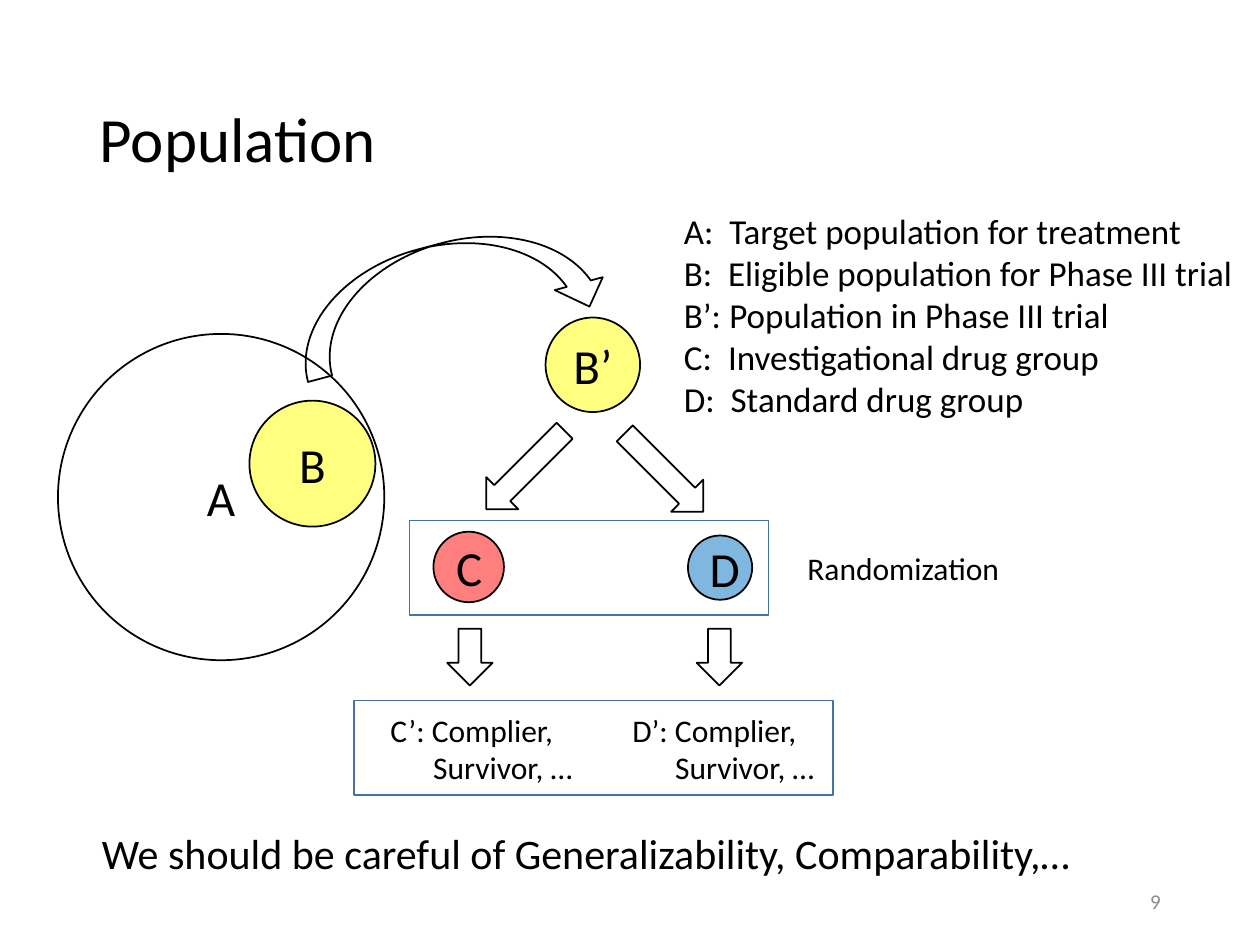
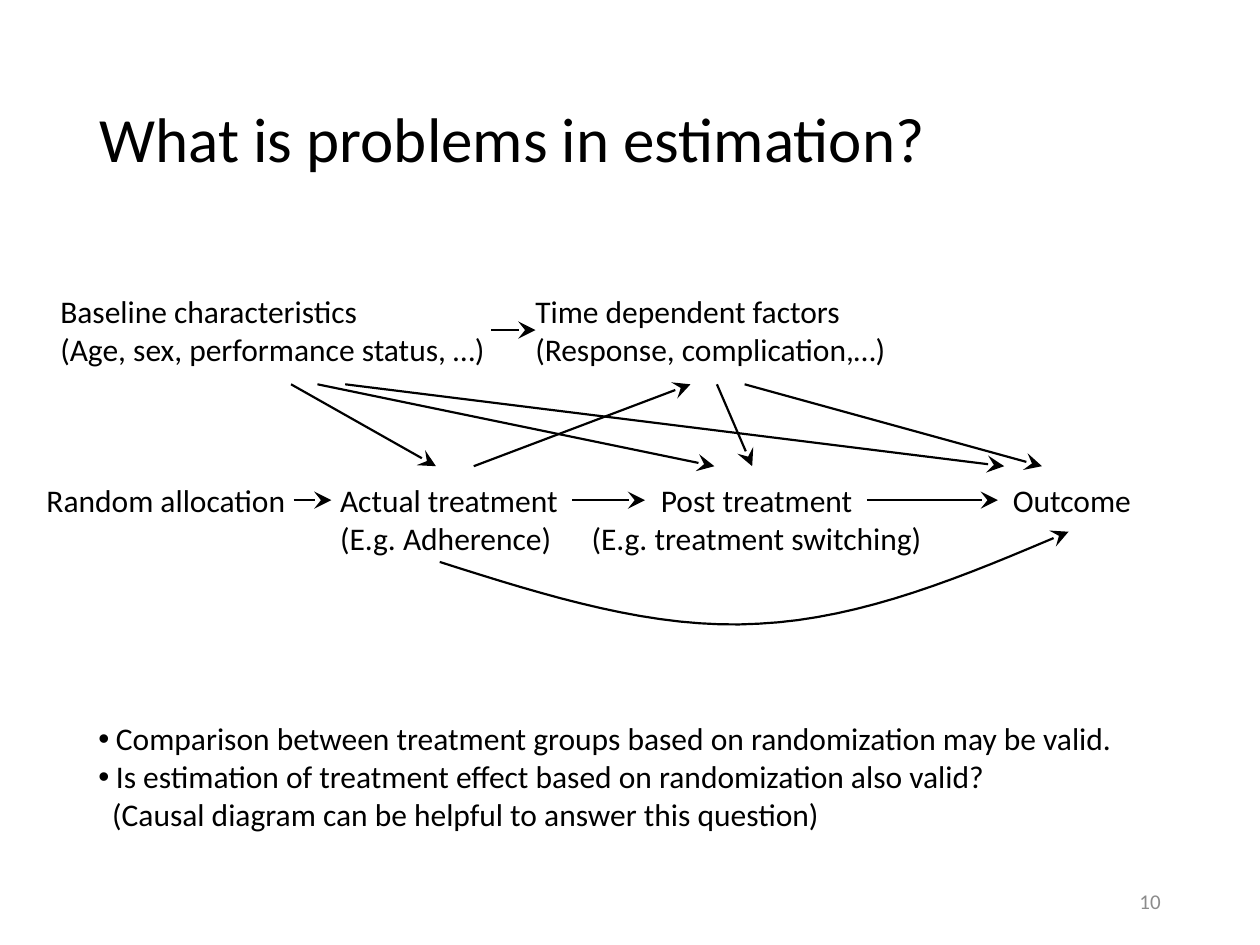
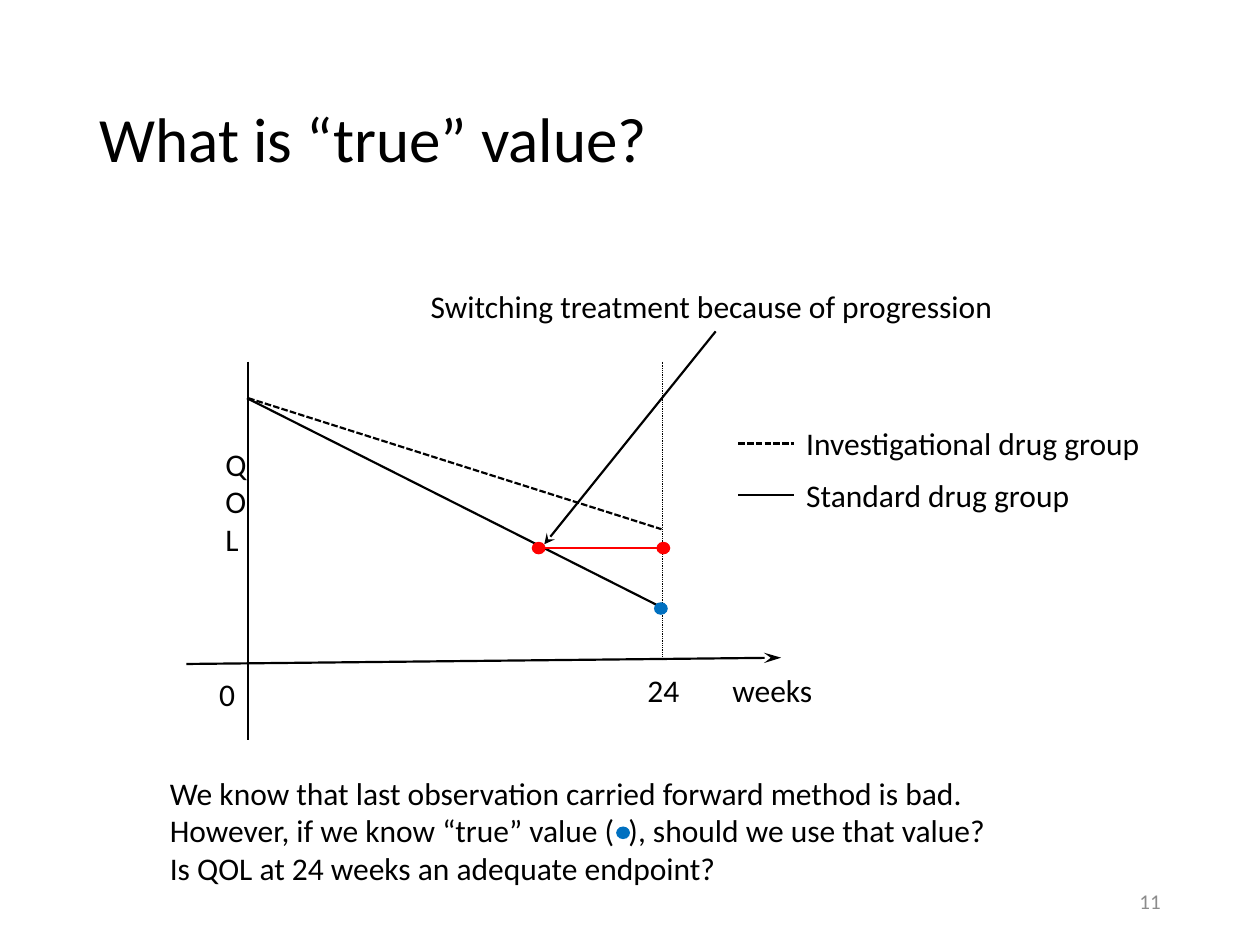
import pptx
import pptx.util
import pptx.dml.color
import pptx.enum.dml
import pptx.enum.shapes
import pptx.enum.text
import pptx.oxml.ns
from lxml import etree

Inches = pptx.util.Inches
Pt = pptx.util.Pt
Shape = pptx.enum.shapes.MSO_SHAPE
Align = pptx.enum.text.PP_ALIGN
Anchor = pptx.enum.text.MSO_ANCHOR
Fit = pptx.enum.text.MSO_AUTO_SIZE
Dash = pptx.enum.dml.MSO_LINE
qn = pptx.oxml.ns.qn

COLORS = {"ink": "000000", "gray": "8C8C8C", "frame": "43739E",
          "yellow": "FFFF00", "red": "FF0000", "blue": "0070C0"}
FONT = "Calibri"
SMALL, LONG, LARGE = ("med", "med"), ("med", "lg"), ("lg", "lg")


def tint(name):
    return pptx.dml.color.RGBColor.from_string(COLORS[name])


def put(frame, text, size=18, color="ink", align=None, space=None,
        anchor=Anchor.TOP, wrap=True, indents=(), bullets=()):
    frame.word_wrap = wrap
    frame.vertical_anchor = anchor
    for i, words in enumerate(text.split("\n")):
        para = frame.paragraphs[0] if i == 0 else frame.add_paragraph()
        para.alignment = align
        para.line_spacing = space
        para.space_before = Pt(0)
        props = para._p.get_or_add_pPr()
        if indents:
            left, first = indents[i]
            props.set("marL", str(Inches(left)))
            props.set("indent", str(Inches(first)))
        if bullets:
            if bullets[i]:
                etree.SubElement(props, qn("a:buChar"), char=bullets[i])
            else:
                etree.SubElement(props, qn("a:buNone"))
        run = para.add_run()
        run.text = words
        run.font.name = FONT
        run.font.size = Pt(size)
        run.font.color.rgb = tint(color)


class Deck:
    def __init__(self, first):
        self.show = pptx.Presentation()
        self.show.slide_width = Inches(10)
        self.show.slide_height = Inches(7.5)
        self.number = first
        self.slide = None

    def place(self, item, left, top, width, height):
        item.left, item.top = Inches(left), Inches(top)
        item.width, item.height = Inches(width), Inches(height)

    def page(self, title, layout=5):
        self.slide = self.show.slides.add_slide(self.show.slide_layouts[layout])
        head = self.slide.shapes.title
        self.place(head, 0.69, 0.4, 8.62, 1.45)
        put(head.text_frame, title, size=36, align=Align.LEFT, space=0.9,
            anchor=Anchor.MIDDLE)
        self.note(str(self.number), 7.06, 6.95, 2.25, 0.4, size=12, color="gray",
                  align=Align.RIGHT, anchor=Anchor.MIDDLE, wrap=True)
        self.number += 1

    def note(self, text, left, top, width, height=0.4, wrap=False, **style):
        box = self.slide.shapes.add_textbox(
            Inches(left), Inches(top), Inches(width), Inches(height))
        put(box.text_frame, text, wrap=wrap, **style)
        if not wrap:
            box.text_frame.auto_size = Fit.SHAPE_TO_FIT_TEXT

    def list(self, text, left, top, width, height, **style):
        body = self.slide.placeholders[1]
        self.place(body, left, top, width, height)
        body.text_frame.auto_size = Fit.NONE
        put(body.text_frame, text, **style)

    def shape(self, kind, left, top, width, height, fill=None, alpha=None,
              edge="ink", turn=0, text=None):
        item = self.slide.shapes.add_shape(
            kind, Inches(left), Inches(top), Inches(width), Inches(height))
        item.shadow.inherit = False
        item.rotation = turn
        if fill:
            item.fill.solid()
            item.fill.fore_color.rgb = tint(fill)
            if alpha:
                color = item._element.spPr.find(".//" + qn("a:srgbClr"))
                etree.SubElement(color, qn("a:alpha"), val=str(alpha * 1000))
        else:
            item.fill.background()
        if edge:
            item.line.color.rgb = tint(edge)
            item.line.width = Pt(1)
        else:
            item.line.fill.background()
        if text:
            put(item.text_frame, text, size=28, align=Align.CENTER,
                anchor=Anchor.MIDDLE)

    def disc(self, text, left, top, size, fill=None):
        self.shape(Shape.OVAL, left, top, size, size, fill, 50, text=text)

    def dot(self, left, top, fill):
        self.shape(Shape.OVAL, left, top, 0.11, 0.1, fill, edge=None)

    def stroke(self, item, color="ink", width=1.25, dash=None, arrow=None):
        item.line.color.rgb = tint(color)
        item.line.width = Pt(width)
        if dash:
            item.line.dash_style = dash
        if arrow:
            wide, long = arrow
            edge = item._element.spPr.find(qn("a:ln"))
            etree.SubElement(edge, qn("a:tailEnd"), type="stealth", w=wide, len=long)

    def line(self, x1, y1, x2, y2, **style):
        item = self.slide.shapes.add_connector(
            pptx.enum.shapes.MSO_CONNECTOR.STRAIGHT,
            Inches(x1), Inches(y1), Inches(x2), Inches(y2))
        self.stroke(item, **style)
        etree.SubElement(item._element.spPr, qn("a:effectLst"))

    def curve(self, start, parts, steps=16, **style):
        points = []
        last = start
        for a, b, end in parts:
            for i in range(1, steps + 1):
                t = i / steps
                u = 1 - t
                points.append(tuple(
                    Inches(u**3 * p + 3 * u * u * t * q + 3 * u * t * t * r + t**3 * s)
                    for p, q, r, s in zip(last, a, b, end)))
            last = end
        path = self.slide.shapes.build_freeform(Inches(start[0]), Inches(start[1]))
        path.add_line_segments(points, close=False)
        item = path.convert_to_shape()
        item.shadow.inherit = False
        item.fill.background()
        self.stroke(item, **style)


def groups(deck):
    deck.page("Population")
    deck.disc("B’", 4.33, 2.52, 0.75, "yellow")
    deck.disc("A", 0.46, 2.65, 2.59)
    deck.note("A:\tTarget population for treatment\n"
              "B:\tEligible population for Phase III trial\n"
              "B’:\tPopulation in Phase III trial\n"
              "C:\tInvestigational drug group\n"
              "D:\tStandard drug group",
              5.33, 1.61, 4.6, 1.78, size=20, wrap=True,
              indents=[(left, -left) for left in (0.36, 0.35, 0.36, 0.35, 0.37)])
    deck.shape(Shape.CURVED_DOWN_ARROW, 2.3, 1.93, 2.51, 0.79, turn=345)
    deck.disc("B", 1.98, 3.18, 1, "yellow")
    for left, top, turn in ((3.99, 3.29, 45), (5.09, 3.31, 315)):
        deck.shape(Shape.DOWN_ARROW, left, top, 0.36, 0.88, turn=turn)
    deck.disc("C", 3.44, 4.22, 0.56, "red")
    deck.disc("D", 5.46, 4.25, 0.51, "blue")
    for name, arm, left in (("C’", 3.55, 3), ("D’", 5.53, 4.92)):
        deck.shape(Shape.DOWN_ARROW, arm, 4.99, 0.36, 0.45)
        deck.note(name + ": Complier,\nSurvivor, …", left, 5.59, 1.67, 0.71,
                  indents=[(0, 0), (0.34, 0)])
    deck.note("We should be careful of Generalizability, Comparability,…",
              0.71, 6.52, 7.89, 0.5, size=24)
    deck.shape(Shape.RECTANGLE, 3.25, 4.13, 2.85, 0.75, edge="frame")
    deck.note("Randomization", 6.31, 4.31, 1.74)
    deck.shape(Shape.RECTANGLE, 2.81, 5.56, 3.8, 0.75, edge="frame")


def causes(deck):
    deck.page("What is problems in estimation?", layout=1)
    upper, lower = 2.27, 3.77
    deck.note("Baseline characteristics\n(Age, sex, performance status, …)",
              0.38, upper, 3.62, 0.71)
    deck.note("Time dependent factors\n(Response, complication,…)",
              4.15, upper, 3.03, 0.71)
    deck.note("Random allocation", 0.27, lower, 2.12)
    deck.note("Actual treatment\n(E.g. Adherence)", 2.6, lower, 1.95, 0.71)
    deck.note("Post treatment\n(E.g. treatment switching)",
              4.58, lower, 2.85, 0.71, align=Align.CENTER)
    deck.note("Outcome", 7.94, lower, 1.15)
    high, low = 3.05, 3.7
    for x1, x2 in ((2.31, 3.46), (2.52, 5.67), (2.74, 7.97), (5.69, 5.97), (5.91, 8.27)):
        deck.line(x1, high, x2, low, arrow=LARGE)
    deck.line(3.76, low, 5.48, high, arrow=LARGE)
    for x1, x2, y in ((3.9, 4.25, 2.62), (2.33, 2.63, 3.97),
                      (4.54, 5.12, 3.97), (6.88, 7.92, 3.97)):
        deck.line(x1, y, x2, y, arrow=LARGE)
    deck.curve((3.49, 4.46),
               [((4.34, 4.73), (5.19, 5), (6.02, 4.95)),
                ((6.85, 4.91), (7.66, 4.57), (8.48, 4.22))], arrow=LARGE)
    deck.list("Comparison between treatment groups based on randomization may be valid.\n"
              "Is estimation of treatment effect based on randomization also valid?\n"
              "(Causal diagram can be helpful to answer this question)",
              0.68, 5.66, 8.33, 1.01,
              indents=[(0.14, -0.14), (0.14, -0.14), (0.11, 0)],
              bullets=["•", "•", None])


def values(deck):
    deck.page("What is “true” value?")
    deck.line(1.97, 2.87, 1.97, 5.87)
    deck.line(1.48, 5.27, 6.2, 5.22, arrow=LONG)
    deck.line(1.97, 3.16, 5.25, 4.2, dash=Dash.SQUARE_DOT)
    deck.line(1.96, 3.16, 5.27, 4.83)
    deck.note("0", 1.64, 5.31, 0.33)
    deck.note("24", 5.04, 5.28, 0.46)
    deck.line(4.23, 4.35, 5.26, 4.35, color="red")
    deck.line(5.68, 2.63, 4.32, 4.32, arrow=SMALL)
    deck.note("Switching treatment because of progression", 3.32, 2.23, 4.71)
    deck.note("QOL", 1.69, 3.48, 0.24, 1.01, wrap=True, align=Align.CENTER)
    deck.note("weeks", 5.68, 5.28, 0.9, wrap=True, align=Align.CENTER)
    for name, width, y, dash in (("Investigational", 2.88, 3.52, Dash.SQUARE_DOT),
                                 ("Standard", 2.32, 3.93, None)):
        deck.line(5.86, y, 6.3, y, dash=dash)
        deck.note(name + " drug group", 6.3, y - 0.2, width)
    deck.line(5.26, 5.24, 5.26, 2.87, width=0.5, dash=Dash.ROUND_DOT)
    deck.note("We know that last observation carried forward method is bad.\n"
              "However, if we know “true” value (  ), should we use that value?\n"
              "Is QOL at 24 weeks an adequate endpoint?", 1.25, 6.09, 6.76, 1.01)
    for left, top, fill in ((4.22, 4.3, "red"), (5.21, 4.3, "red"),
                            (5.19, 4.78, "blue"), (4.89, 6.56, "blue")):
        deck.dot(left, top, fill)


def main():
    deck = Deck(first=9)
    groups(deck)
    causes(deck)
    values(deck)
    deck.show.save("out.pptx")


if __name__ == "__main__":
    main()
